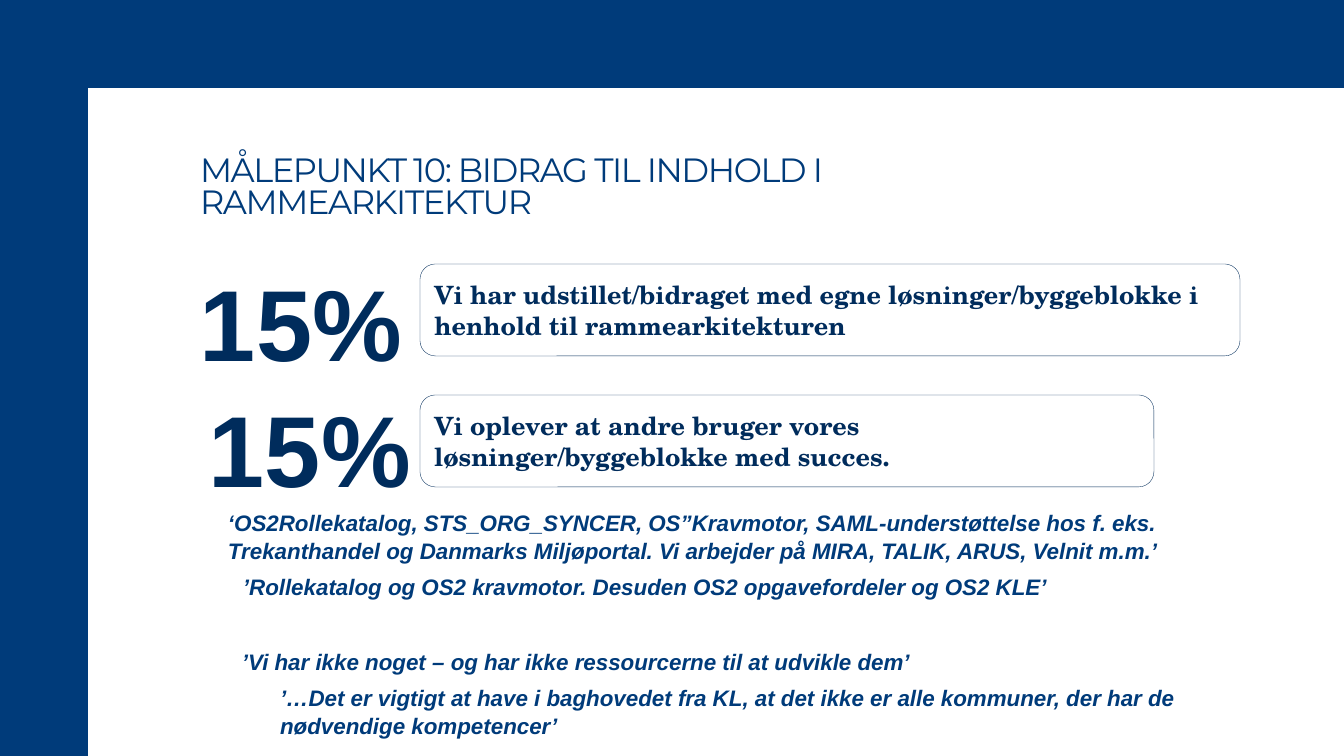
from dataclasses import dataclass

from pptx import Presentation
from pptx.dml.color import RGBColor
from pptx.enum.shapes import MSO_SHAPE
from pptx.enum.text import MSO_ANCHOR, MSO_AUTO_SIZE, PP_ALIGN
from pptx.util import Emu, Pt

ROUND = MSO_SHAPE.ROUNDED_RECTANGLE
BOTTOM, MIDDLE, TOP = MSO_ANCHOR.BOTTOM, MSO_ANCHOR.MIDDLE, MSO_ANCHOR.TOP
NO_FIT = MSO_AUTO_SIZE.NONE
LEFT = PP_ALIGN.LEFT
SCALE = 914400 / 100.8
WIDE, HIGH, BAND = 1344, 756, 88


@dataclass(frozen=True)
class Style:
    """Font settings of one kind of text."""
    face: str
    size: int
    color: RGBColor
    bold: bool = True
    slant: bool = False
    pace: float = 1.0


class Theme:
    """Colours and type styles of the slide."""
    BLUE = RGBColor(0x00, 0x3B, 0x7A)
    NAVY = RGBColor(0x00, 0x2C, 0x5C)
    EDGE = RGBColor(0x00, 0x2C, 0x5A)
    TITLE = Style("Montserrat", 24, BLUE, bold=False, pace=0.8)
    CLAIM = Style("TeX Gyre Schola", 18, NAVY)
    SHARE = Style("Arial", 72, NAVY, pace=1.04)
    QUOTE = Style("Arial", 16, BLUE, slant=True, pace=1.04)


TITLE = "MÅLEPUNKT 10: BIDRAG TIL INDHOLD I RAMMEARKITEKTUR"
GOALS = [
    ("15%", (200, 256), (420, 264, 820, 92),
     "Vi har udstillet/bidraget med egne løsninger/byggeblokke i "
     "henhold til rammearkitekturen"),
    ("15%", (209, 382), (420, 395, 734, 92),
     "Vi oplever at andre bruger vores løsninger/byggeblokke med succes."),
]
QUOTES = [
    (228, 508, 940, [
        "‘OS2Rollekatalog, STS_ORG_SYNCER, OS”Kravmotor, "
        "SAML-understøttelse hos f. eks.",
        "Trekanthandel og Danmarks Miljøportal. "
        "Vi arbejder på MIRA, TALIK, ARUS, Velnit m.m.’"]),
    (243, 572, 814, [
        "’Rollekatalog og OS2 kravmotor. "
        "Desuden OS2 opgavefordeler og OS2 KLE’"]),
    (242, 647, 677, [
        "’Vi har ikke noget – og har ikke ressourcerne til at udvikle dem’"]),
    (280, 683, 907, [
        "’…Det er vigtigt at have i baghovedet fra KL, "
        "at det ikke er alle kommuner, der har de",
        "nødvendige kompetencer’"]),
]


def px(count):
    """Turn pixels into EMU."""
    return Emu(round(count * SCALE))


def write(frame, lines, style, anchor=TOP, inset=0):
    """Fill a text frame with one styled paragraph per line."""
    frame.word_wrap = True
    frame.auto_size = NO_FIT
    frame.vertical_anchor = anchor
    frame.margin_left = frame.margin_right = px(inset)
    frame.margin_top = frame.margin_bottom = px(inset // 2)
    for index, line in enumerate(lines):
        para = frame.add_paragraph() if index else frame.paragraphs[0]
        para.alignment = LEFT
        para.line_spacing = style.pace
        para.space_before = Pt(0)
        run = para.add_run()
        run.text = line
        font = run.font
        font.name, font.size = style.face, Pt(style.size)
        font.bold, font.italic = style.bold, style.slant
        font.color.rgb = style.color


def add_frame(slide):
    """Draw the blue band along the top and left edges."""
    pen = slide.shapes.build_freeform(0, 0, scale=SCALE)
    pen.add_line_segments([(WIDE, 0), (WIDE, BAND), (BAND, BAND),
                           (BAND, HIGH), (0, HIGH)])
    band = pen.convert_to_shape()
    band.shadow.inherit = False
    band.fill.solid()
    band.fill.fore_color.rgb = Theme.BLUE
    band.line.fill.background()


def add_title(slide, text):
    """Place the heading in the title placeholder."""
    title = slide.shapes.title
    title.left, title.top, title.width, title.height = map(
        px, (200, 128, 901, 93))
    write(title.text_frame, [text], Theme.TITLE, BOTTOM)
    run = title.text_frame.paragraphs[0].runs[0]
    run.font._element.set("spc", "-100")


def add_text(slide, area, lines, style):
    """Place a text box without margins."""
    box = slide.shapes.add_textbox(*map(px, area))
    write(box.text_frame, lines, style)


def add_claim(slide, area, text):
    """Place a rounded outline with a statement in it."""
    box = slide.shapes.add_shape(ROUND, *map(px, area))
    box.shadow.inherit = False
    box.fill.background()
    box.line.color.rgb = Theme.EDGE
    box.line.width = Pt(0.25)
    write(box.text_frame, [text], Theme.CLAIM, MIDDLE, 10)


def main():
    """Build the slide and save it."""
    deck = Presentation()
    deck.slide_width, deck.slide_height = px(WIDE), px(HIGH)
    slide = deck.slides.add_slide(deck.slide_layouts[5])
    add_frame(slide)
    add_title(slide, TITLE)
    for share, spot, area, claim in GOALS:
        add_claim(slide, area, claim)
        add_text(slide, (*spot, 204, 127), [share], Theme.SHARE)
    for left, top, width, lines in QUOTES:
        add_text(slide, (left, top, width, 28 * len(lines)), lines,
                 Theme.QUOTE)
    deck.save("out.pptx")


if __name__ == "__main__":
    main()
